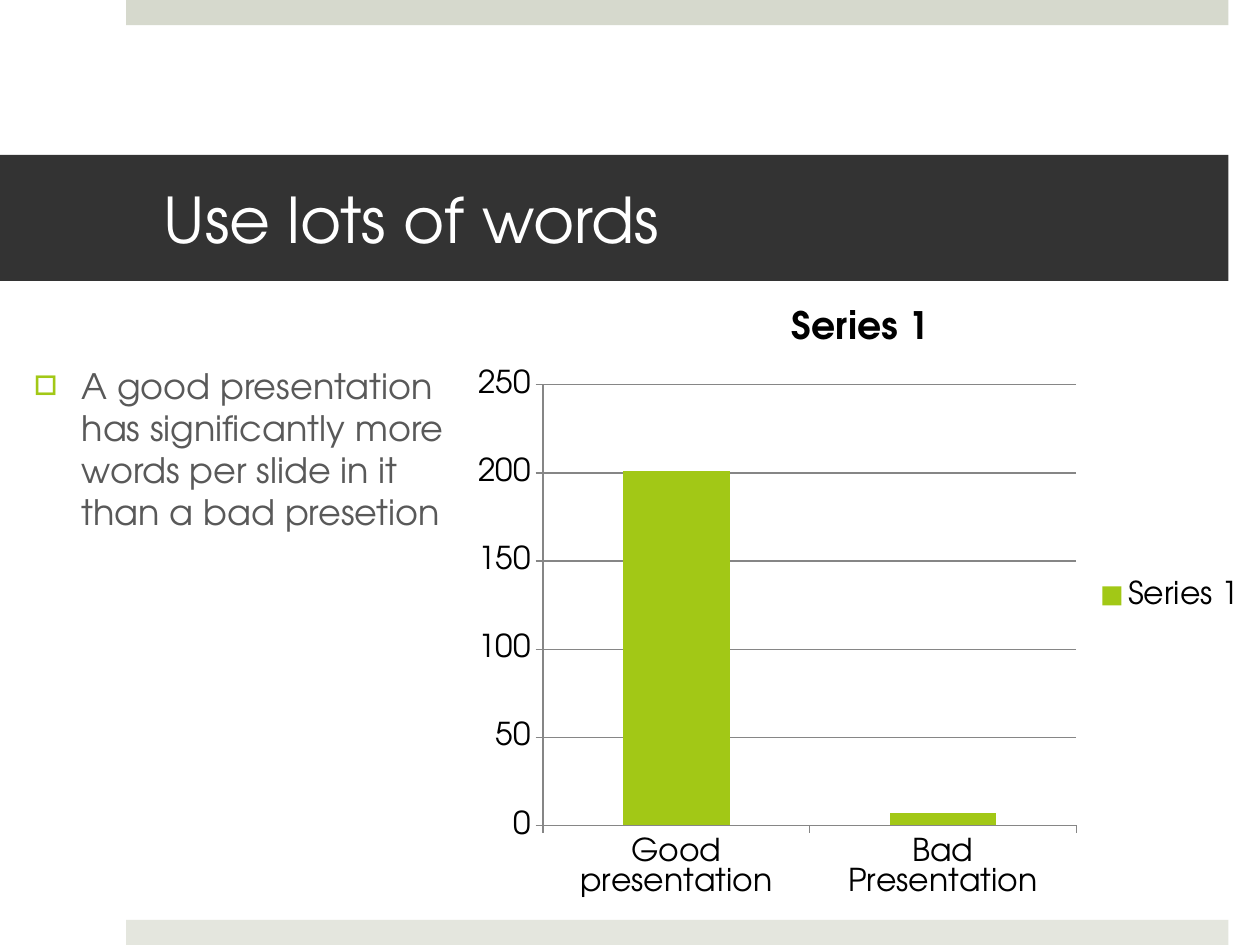
import pptx
import pptx.chart.data
import pptx.dml.color
import pptx.enum.chart
import pptx.enum.shapes
import pptx.enum.text
import pptx.oxml
import pptx.oxml.ns
import pptx.util
from pptx.util import Inches

FONT = "TeX Gyre Adventor"
COLORS = {
    "top_band": "D6D9CD",
    "bottom_band": "E4E6DE",
    "title_band": "333333",
    "title": "FFFFFF",
    "body": "595959",
    "accent": "A2C816",
    "chart_text": "000000",
    "chart_line": "868686",
}


def rgb(name):
    return pptx.dml.color.RGBColor.from_string(COLORS[name])


def style_font(font, size, color, bold=False):
    font.name = FONT
    font.size = pptx.util.Pt(size)
    font.bold = bold
    font.color.rgb = rgb(color)


def add_band(slide, left, top, width, height, color):
    band = slide.shapes.add_shape(
        pptx.enum.shapes.MSO_SHAPE.RECTANGLE,
        Inches(left), Inches(top), Inches(width), Inches(height))
    band.shadow.inherit = False
    band.fill.solid()
    band.fill.fore_color.rgb = rgb(color)
    band.line.fill.background()
    return band


def write_text(frame, text, *, size, color, anchor, insets=(0.1, 0.05, 0.1, 0.05),
               space_before=0):
    """Fill a text frame; insets run left, top, right, bottom in inches."""
    frame.word_wrap = True
    frame.vertical_anchor = anchor
    (frame.margin_left, frame.margin_top,
     frame.margin_right, frame.margin_bottom) = map(Inches, insets)
    paragraph = frame.paragraphs[0]
    paragraph.alignment = pptx.enum.text.PP_ALIGN.LEFT
    paragraph.space_before = pptx.util.Pt(space_before)
    run = paragraph.add_run()
    run.text = text
    style_font(run.font, size, color)
    return paragraph


def add_bullet(paragraph, char, color, indent):
    properties = paragraph._p.get_or_add_pPr()
    properties.set("marL", str(Inches(indent)))
    properties.set("indent", str(-Inches(indent)))
    namespace = pptx.oxml.ns.nsdecls("a")
    for xml in (
        f'<a:buClr {namespace}><a:srgbClr val="{COLORS[color]}"/></a:buClr>',
        f'<a:buFont {namespace} typeface="{FONT}"/>',
        f'<a:buChar {namespace} char="{char}"/>',
    ):
        properties.append(pptx.oxml.parse_xml(xml))


def style_axis(axis):
    axis.major_tick_mark = pptx.enum.chart.XL_TICK_MARK.OUTSIDE
    axis.minor_tick_mark = pptx.enum.chart.XL_TICK_MARK.NONE
    style_line(axis.format.line)


def style_line(line):
    line.color.rgb = rgb("chart_line")
    line.width = pptx.util.Pt(0.75)


def add_word_chart(slide):
    words = pptx.chart.data.CategoryChartData()
    words.categories = ["Good presentation", "Bad Presentation"]
    words.add_series("Series 1", [201, 7])
    chart = slide.shapes.add_chart(
        pptx.enum.chart.XL_CHART_TYPE.COLUMN_CLUSTERED,
        Inches(3.67), Inches(2.23), Inches(6.33), Inches(5), words).chart
    style_font(chart.font, 18, "chart_text")

    chart.has_title = True
    heading = chart.chart_title.text_frame.paragraphs[0].add_run()
    heading.text = "Series 1"
    style_font(heading.font, 21.6, "chart_text", bold=True)
    chart.chart_title.include_in_layout = False

    chart.has_legend = True
    chart.legend.position = pptx.enum.chart.XL_LEGEND_POSITION.RIGHT
    chart.legend.include_in_layout = False

    for axis in (chart.category_axis, chart.value_axis):
        style_axis(axis)
    chart.value_axis.has_major_gridlines = True
    style_line(chart.value_axis.major_gridlines.format.line)

    plot = chart.plots[0]
    plot.gap_width = 150
    plot.vary_by_categories = False
    columns = plot.series[0].format.fill
    columns.solid()
    columns.fore_color.rgb = rgb("accent")


def main():
    presentation = pptx.Presentation()
    presentation.slide_width = Inches(10)
    presentation.slide_height = Inches(7.5)
    slide = presentation.slides.add_slide(presentation.slide_layouts[6])
    anchors = pptx.enum.text.MSO_ANCHOR

    add_band(slide, 1, 0, 8.75, 0.2, "top_band")
    add_band(slide, 1, 7.3, 8.75, 0.2, "bottom_band")
    title_band = add_band(slide, 0, 1.23, 9.75, 1, "title_band")
    write_text(title_band.text_frame, "Use lots of words", size=36, color="title",
               anchor=anchors.MIDDLE, insets=(1.3, 0.05, 0.3, 0.05))

    claim = slide.shapes.add_textbox(
        Inches(0.17), Inches(2.84), Inches(3.5), Inches(4.01))
    claim_line = write_text(
        claim.text_frame,
        "A good presentation has significantly more words per slide in it "
        "than a bad presetion",
        size=20, color="body", anchor=anchors.TOP, space_before=20)
    add_bullet(claim_line, "□", "accent", 0.38)

    add_word_chart(slide)
    presentation.save("out.pptx")


if __name__ == "__main__":
    main()
